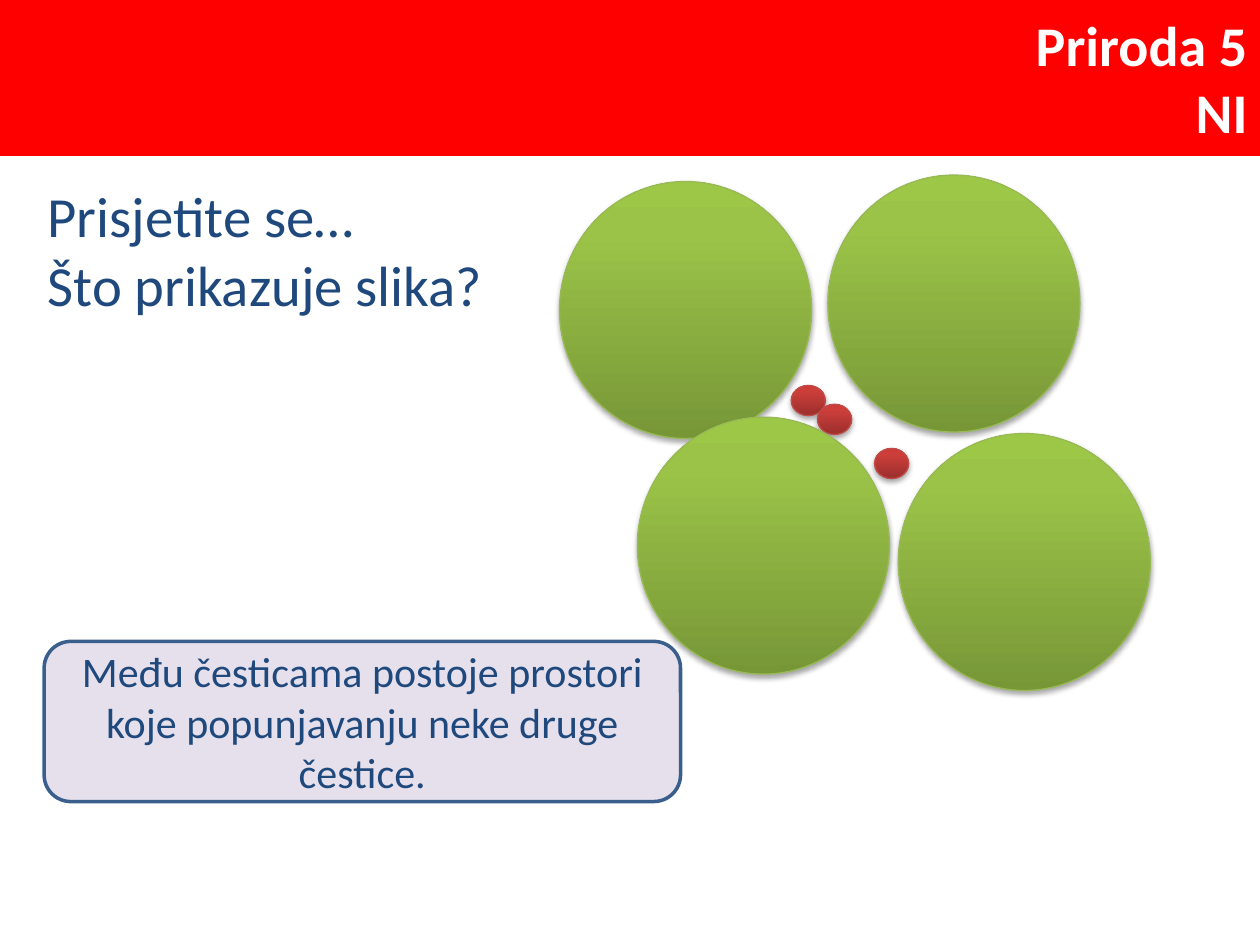
from pptx import Presentation
from pptx import util as u
from pptx.dml.color import RGBColor
from pptx.enum import shapes, text
from pptx.oxml import parse_xml
from pptx.oxml.ns import nsdecls, qn

RED = RGBColor(0xFF, 0x00, 0x00)
WHITE = RGBColor(0xFF, 0xFF, 0xFF)
NAVY = RGBColor(0x1F, 0x49, 0x7D)
LILAC = RGBColor(0xE6, 0xE0, 0xEC)
BOX_EDGE = RGBColor(0x3A, 0x5F, 0x8C)
GREEN_EDGE = RGBColor(0x98, 0xB9, 0x55)
GREEN_STOPS = (
    (0, RGBColor(0x77, 0x97, 0x37)),
    (80, RGBColor(0x9B, 0xC3, 0x48)),
    (100, RGBColor(0x9D, 0xC7, 0x46)),
)
RED_EDGE = RGBColor(0xBF, 0x4C, 0x48)
RED_STOPS = (
    (0, RGBColor(0x9C, 0x2F, 0x2D)),
    (80, RGBColor(0xCB, 0x3E, 0x3A)),
    (100, RGBColor(0xCE, 0x3B, 0x37)),
)
LARGE = (5.08, 5.18, GREEN_STOPS, GREEN_EDGE)
SMALL = (0.69, 0.61, RED_STOPS, RED_EDGE)
PARTICLES = (
    (11.28, 3.66, LARGE),
    (15.95, 7.77, SMALL),
    (16.48, 8.15, SMALL),
    (16.69, 3.53, LARGE),
    (18.11, 8.74, LARGE),
    (12.85, 8.41, LARGE),
    (17.63, 9.04, SMALL),
)


def write_lines(shape, lines, size, color, alignment, bold=False):
    frame = shape.text_frame
    frame.word_wrap = True
    frame.text = "\n".join(lines)
    for paragraph in frame.paragraphs:
        paragraph.alignment = alignment
        paragraph.font.name = "Calibri"
        paragraph.font.size = u.Pt(size)
        paragraph.font.bold = bold
        paragraph.font.color.rgb = color


def add_panel(slide, kind, box, fill, edge):
    shape = slide.shapes.add_shape(kind, *map(u.Cm, box))
    shape.shadow.inherit = False
    shape.fill.solid()
    shape.fill.fore_color.rgb = fill
    shape.line.color.rgb = edge
    shape.line.width = u.Pt(2)
    shape.text_frame.vertical_anchor = text.MSO_ANCHOR.MIDDLE
    return shape


def add_title(slide, box, lines):
    title = slide.shapes.add_textbox(*map(u.Cm, box))
    write_lines(title, lines, 32.4, NAVY, text.PP_ALIGN.LEFT)


def add_particle(slide, left, top, style):
    width, height, stops, edge = style
    particle = slide.shapes.add_shape(
        shapes.MSO_SHAPE.OVAL, *map(u.Cm, (left, top, width, height)))
    particle.line.color.rgb = edge
    particle.line.width = u.Pt(0.75)
    particle.shadow.inherit = False
    properties = particle._element.spPr
    stop_xml = "".join(
        f'<a:gs pos="{position * 1000}"><a:srgbClr val="{color}"/></a:gs>'
        for position, color in stops)
    gradient = parse_xml(
        f'<a:gradFill {nsdecls("a")} rotWithShape="1"><a:gsLst>{stop_xml}</a:gsLst>'
        '<a:lin ang="16200000" scaled="0"/></a:gradFill>')
    properties.find(qn("a:prstGeom")).addnext(gradient)
    shadow = parse_xml(
        f'<a:outerShdw {nsdecls("a")} blurRad="{u.Pt(3.1)}" dist="{u.Pt(1.8)}" '
        'dir="5400000" rotWithShape="0"><a:srgbClr val="000000">'
        '<a:alpha val="35000"/></a:srgbClr></a:outerShdw>')
    properties.find(qn("a:effectLst")).append(shadow)


def main():
    presentation = Presentation()
    presentation.slide_width = u.Cm(25.4)
    presentation.slide_height = u.Cm(19.05)
    slide = presentation.slides.add_slide(presentation.slide_layouts[6])

    header = add_panel(
        slide, shapes.MSO_SHAPE.RECTANGLE, (0, 0, 25.4, 3.12), RED, RED)
    write_lines(header, ("Priroda 5", "NI"), 32, WHITE,
                text.PP_ALIGN.RIGHT, bold=True)
    add_title(slide, (0.71, 3.53, 18.39, 2.39),
              ("Prisjetite se…", "Što prikazuje slika?"))
    answer = add_panel(
        slide, shapes.MSO_SHAPE.ROUNDED_RECTANGLE, (0.89, 12.93, 12.83, 3.23),
        LILAC, BOX_EDGE)
    write_lines(
        answer,
        ("Među česticama postoje prostori koje popunjavanju neke druge čestice.",),
        24, NAVY, text.PP_ALIGN.CENTER)
    for left, top, style in PARTICLES:
        add_particle(slide, left, top, style)

    presentation.save("out.pptx")


if __name__ == "__main__":
    main()
